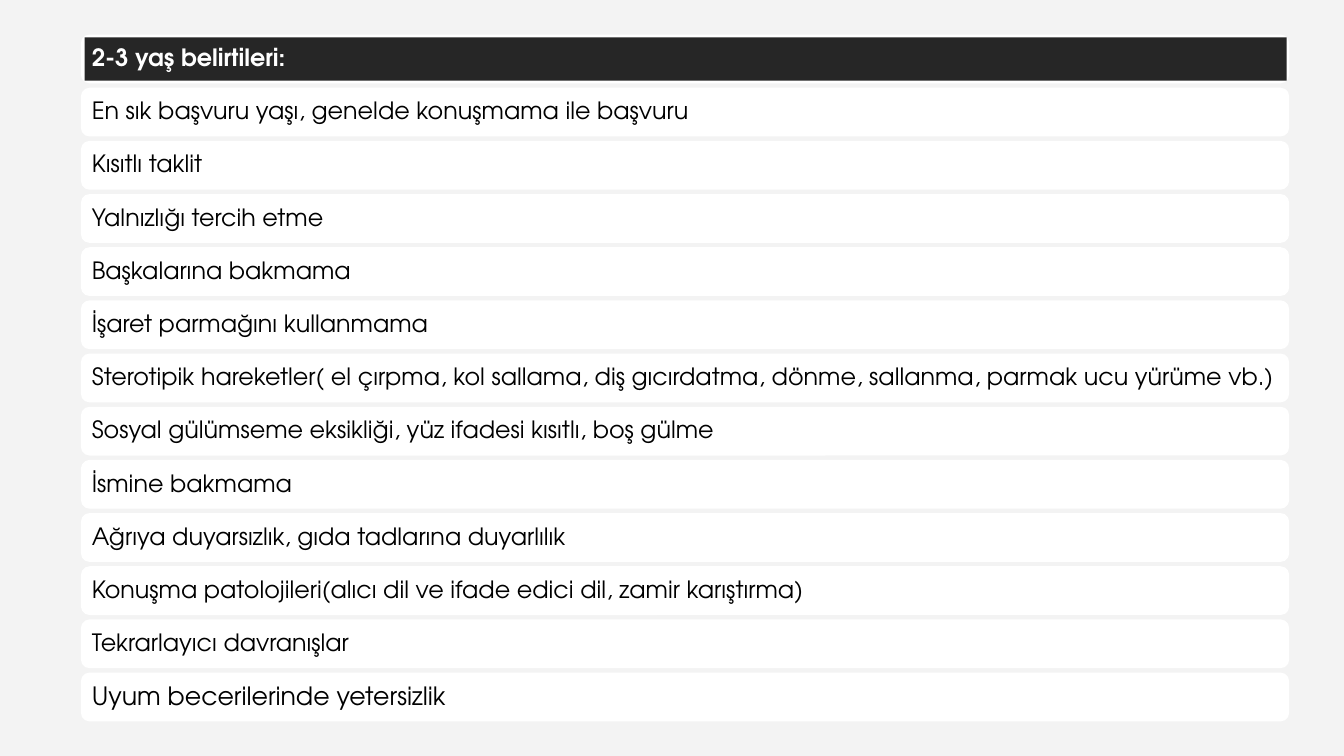
"""Build a slide listing the signs seen at the age of 2-3."""
from pptx import Presentation
from pptx.dml.color import RGBColor
from pptx.enum import shapes, text
from pptx.util import Inches, Pt

BACKGROUND = RGBColor(0xF3, 0xF3, 0xF3)
WHITE = RGBColor(0xFF, 0xFF, 0xFF)
BLACK = RGBColor(0, 0, 0)
CHARCOAL = RGBColor(0x26, 0x26, 0x26)

HEADING = "2-3 yaş belirtileri:"
SIGNS = [
    "En sık başvuru yaşı, genelde konuşmama ile başvuru",
    "Kısıtlı taklit",
    "Yalnızlığı tercih etme",
    "Başkalarına bakmama",
    "İşaret parmağını kullanmama",
    "Sterotipik hareketler( el çırpma, kol sallama, diş gıcırdatma, dönme, sallanma, parmak ucu yürüme vb.)",
    "Sosyal gülümseme eksikliği, yüz ifadesi kısıtlı, boş gülme",
    "İsmine bakmama",
    "Ağrıya duyarsızlık, gıda tadlarına duyarlılık",
    "Konuşma patolojileri(alıcı dil ve ifade edici dil, zamir karıştırma)",
    "Tekrarlayıcı davranışlar",
    "Uyum becerilerinde yetersizlik",
]
FIRST_TOP, LAST_TOP = 0.35, 6.68
ROW_PITCH = (LAST_TOP - FIRST_TOP) / len(SIGNS)
INSET = Inches(0.07)

deck = Presentation()
deck.slide_width, deck.slide_height = Inches(13.33), Inches(7.5)
slide = deck.slides.add_slide(deck.slide_layouts[6])
slide.background.fill.solid()
slide.background.fill.fore_color.rgb = BACKGROUND
sign_list = slide.shapes.add_group_shape()


def add_panel(preset, left, top, width, height, color):
    panel = sign_list.shapes.add_shape(
        preset, Inches(left), Inches(top), Inches(width), Inches(height))
    panel.shadow.inherit = False
    panel.fill.solid()
    panel.fill.fore_color.rgb = color
    return panel


for row, wording in enumerate([HEADING, *SIGNS]):
    top = FIRST_TOP + row * ROW_PITCH
    is_heading = row == 0
    is_last = row == len(SIGNS)

    card = add_panel(shapes.MSO_SHAPE.ROUNDED_RECTANGLE, 0.81, top, 11.97, 0.47, WHITE)
    card.adjustments[0] = 0.167
    card.line.color.rgb = WHITE
    card.line.width = Pt(1)

    label = add_panel(shapes.MSO_SHAPE.RECTANGLE, 0.84, top + 0.02, 11.92, 0.43,
                      CHARCOAL if is_heading else WHITE)
    label.line.fill.background()
    frame_format = {
        "margin_left": INSET, "margin_right": INSET,
        "margin_top": INSET, "margin_bottom": INSET,
        "vertical_anchor": text.MSO_ANCHOR.MIDDLE, "word_wrap": True,
    }
    for attribute, value in frame_format.items():
        setattr(label.text_frame, attribute, value)

    paragraph = label.text_frame.paragraphs[0]
    paragraph.alignment = text.PP_ALIGN.LEFT
    paragraph.line_spacing = 0.9
    sign = paragraph.add_run()
    sign.text = wording
    font_format = {"name": "TeX Gyre Adventor", "size": Pt(18 if is_last else 17),
                   "bold": is_heading}
    for attribute, value in font_format.items():
        setattr(sign.font, attribute, value)
    sign.font.color.rgb = WHITE if is_heading else BLACK

deck.save("out.pptx")
